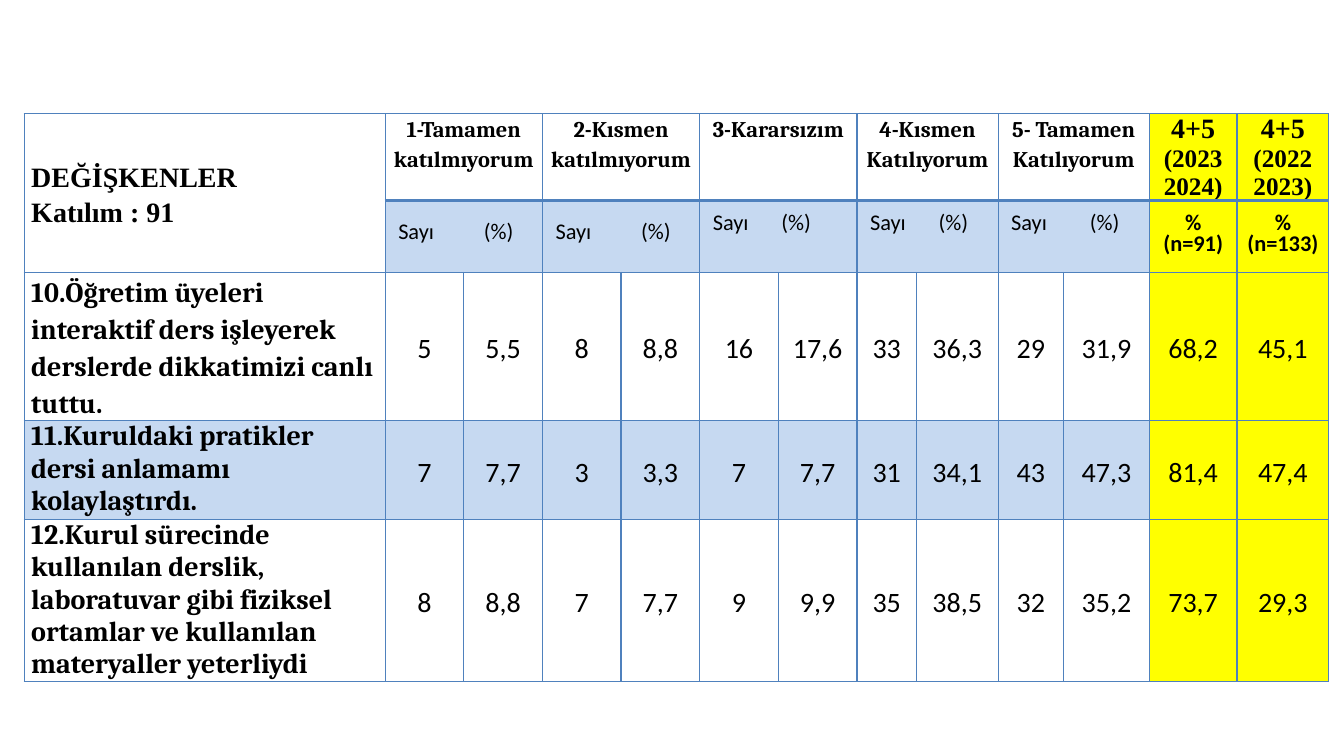
from lxml import etree
from pptx import Presentation
from pptx.dml.color import RGBColor
from pptx.enum.text import MSO_ANCHOR, PP_ALIGN
from pptx.oxml.ns import qn
from pptx.util import Inches, Pt

TOP, MIDDLE = MSO_ANCHOR.TOP, MSO_ANCHOR.MIDDLE
LEFT, CENTER = PP_ALIGN.LEFT, PP_ALIGN.CENTER
BLUE, PALE, YELLOW, BLACK = "4F81BD", "C6D9F1", "FFFF00", "000000"
BLANK_LAYOUT = 6
SIDE_MARGIN = 0.07
COLUMN_WIDTHS = [3.58] + [0.78] * 6 + [0.59, 0.81, 0.65, 0.85, 0.87, 0.91]
ROW_HEIGHTS = [0.86, 0.71, 1.47, 0.98, 1.61]

ANSWERS = [
    ("1-Tamamen katılmıyorum", 0.85, 0),
    ("2-Kısmen katılmıyorum", 0.85, 0),
    ("3-Kararsızım", 0.68, 0.18),
    ("4-Kısmen Katılıyorum", 0.68, 0.18),
    ("5- Tamamen Katılıyorum", 0.78, 0.18),
]
TOTALS = [("(2023 2024)", "(n=91)"), ("(2022 2023)", "(n=133)")]
QUESTIONS = [
    ("10.Öğretim üyeleri interaktif ders işleyerek derslerde dikkatimizi canlı tuttu.",
     1.15, "5 5,5 8 8,8 16 17,6 33 36,3 29 31,9 68,2 45,1"),
    ("11.Kuruldaki pratikler dersi anlamamı kolaylaştırdı.",
     1.0, "7 7,7 3 3,3 7 7,7 31 34,1 43 47,3 81,4 47,4"),
    ("12.Kurul sürecinde kullanılan derslik, laboratuvar gibi fiziksel ortamlar "
     "ve kullanılan materyaller yeterliydi",
     1.0, "8 8,8 7 7,7 9 9,9 35 38,5 32 35,2 73,7 29,3"),
]


def color(value):
    return RGBColor.from_string(value)


def apply(target, values):
    for name, value in values.items():
        setattr(target, name, value)


def write(cell, lines, font="Calibri", bold=False, spacing=1.15,
          alignment=CENTER, anchor=MIDDLE, left=SIDE_MARGIN, bottom=0):
    apply(cell, {"margin_left": Inches(left), "margin_right": Inches(SIDE_MARGIN),
                 "margin_top": 0, "margin_bottom": Inches(bottom),
                 "vertical_anchor": anchor})
    frame = cell.text_frame
    for index, (text, size) in enumerate(lines):
        paragraph = frame.add_paragraph() if index else frame.paragraphs[0]
        apply(paragraph, {"alignment": alignment, "line_spacing": spacing})
        run = paragraph.add_run()
        run.text = text
        apply(run.font, {"name": font, "size": Pt(size), "bold": bold})
        run.font.color.rgb = color(BLACK)


def add_tab_stop(paragraph, position):
    tabs = etree.SubElement(paragraph._p.get_or_add_pPr(), qn("a:tabLst"))
    etree.SubElement(tabs, qn("a:tab"), pos=str(Inches(position)), algn="l")


def paint(cell, fill, widths):
    if fill:
        cell.fill.solid()
        cell.fill.fore_color.rgb = color(fill)
    else:
        cell.fill.background()
    properties = cell._tc.get_or_add_tcPr()
    for index, (side, width) in enumerate(widths.items()):
        line = etree.Element(qn(f"a:ln{side}"), w=str(Pt(width)))
        solid = etree.SubElement(line, qn("a:solidFill"))
        etree.SubElement(solid, qn("a:srgbClr"), val=BLUE)
        properties.insert(index, line)


def add_grid(slide):
    frame = slide.shapes.add_table(
        len(ROW_HEIGHTS), len(COLUMN_WIDTHS), Inches(0.24), Inches(1.13),
        Inches(sum(COLUMN_WIDTHS)), Inches(sum(ROW_HEIGHTS)))
    table = frame.table
    apply(table, {"first_row": False, "horz_banding": False})
    for column, width in zip(table.columns, COLUMN_WIDTHS):
        column.width = Inches(width)
    for row, height in zip(table.rows, ROW_HEIGHTS):
        row.height = Inches(height)
    return table


def paint_grid(table):
    first_total = len(COLUMN_WIDTHS) - len(TOTALS)
    for row in range(len(ROW_HEIGHTS)):
        for column in range(len(COLUMN_WIDTHS)):
            shaded = row == 3 or (row == 1 and column > 0)
            fill = YELLOW if column >= first_total else PALE if shaded else None
            widths = {"L": 1, "R": 1,
                      "T": 2.25 if row == 1 and column else 1,
                      "B": 2.25 if row == 0 and column else 1}
            paint(table.cell(row, column), fill, widths)


def fill_header(table):
    table.cell(0, 0).merge(table.cell(1, 0))
    write(table.cell(0, 0), [("DEĞİŞKENLER", 20), ("Katılım : 91", 20)],
          font="Times New Roman", bold=True, alignment=LEFT)
    for index, (answer, tab, bottom) in enumerate(ANSWERS):
        column = 1 + 2 * index
        for row in (0, 1):
            table.cell(row, column).merge(table.cell(row, column + 1))
        write(table.cell(0, column), [(answer, 16)], font="Cambria", bold=True,
              anchor=TOP)
        units = table.cell(1, column)
        write(units, [("Sayı\t(%)", 16)], spacing=Pt(13), alignment=LEFT,
              left=0.13, bottom=bottom)
        add_tab_stop(units.text_frame.paragraphs[0], tab)
    for column, (years, count) in enumerate(TOTALS, 1 + 2 * len(ANSWERS)):
        write(table.cell(0, column), [("4+5", 20), (years, 18)],
              font="Times New Roman", bold=True, spacing=1.0, anchor=TOP)
        write(table.cell(1, column), [("%", 16), (count, 16)], bold=True,
              spacing=Pt(15))


def fill_questions(table):
    for row, (question, spacing, values) in enumerate(QUESTIONS, 2):
        write(table.cell(row, 0), [(question, 20)], font="Cambria", bold=True,
              spacing=spacing, alignment=LEFT, anchor=TOP)
        for column, value in enumerate(values.split(), 1):
            write(table.cell(row, column), [(value, 20)])


def main():
    presentation = Presentation()
    apply(presentation, {"slide_width": Inches(13.33), "slide_height": Inches(7.5)})
    slide = presentation.slides.add_slide(presentation.slide_layouts[BLANK_LAYOUT])
    table = add_grid(slide)
    fill_header(table)
    fill_questions(table)
    paint_grid(table)
    presentation.save("out.pptx")


if __name__ == "__main__":
    main()
